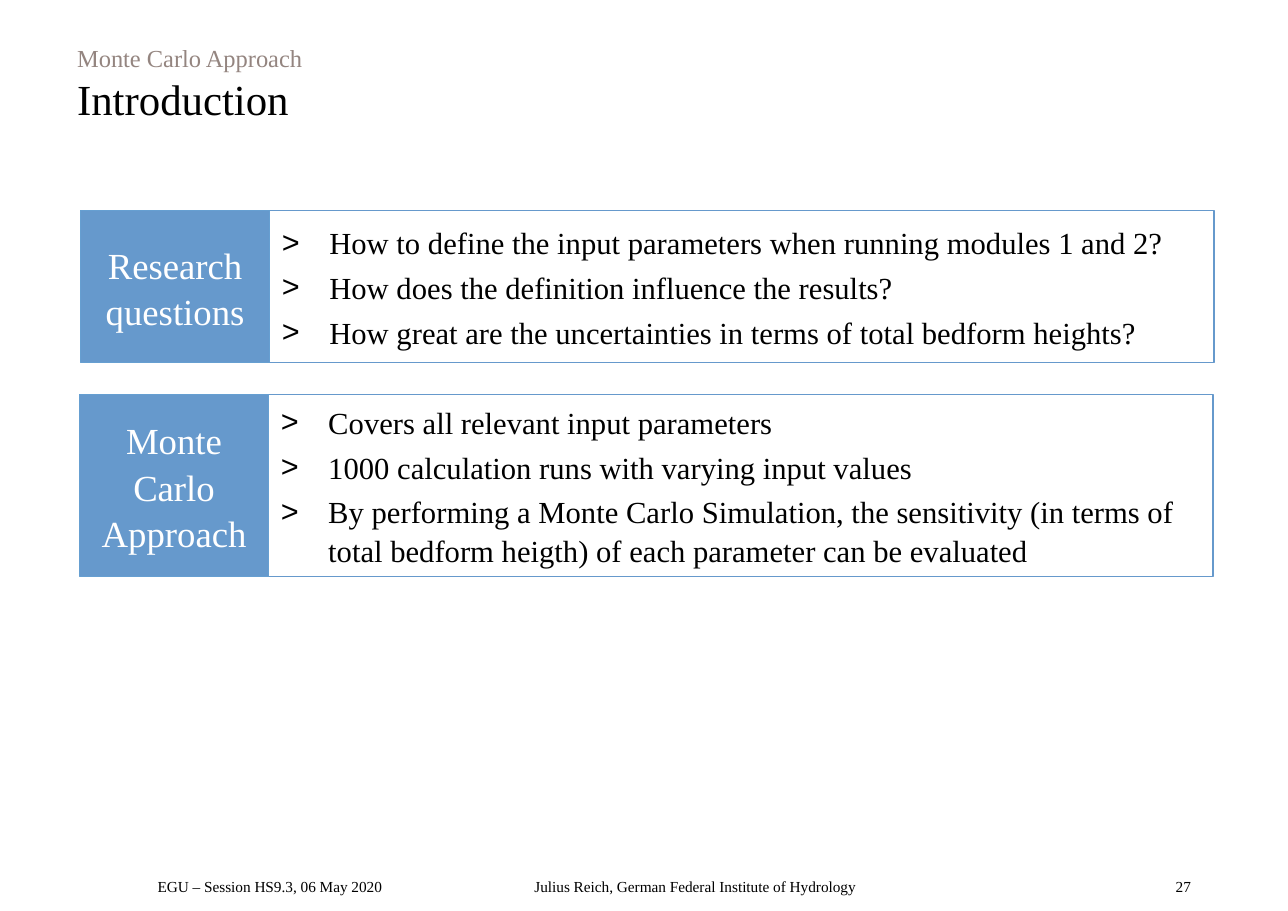
from lxml.etree import SubElement
from pptx import Presentation
from pptx.dml.color import RGBColor
from pptx.enum.shapes import MSO_SHAPE
from pptx.enum.text import MSO_ANCHOR, PP_ALIGN
from pptx.oxml.ns import qn
from pptx.util import Inches, Pt

BLUE, EDGE, GREY = "6699CC", "669FD1", "948580"
BLACK, WHITE = "000000", "FFFFFF"


def tint(code):
    return RGBColor.from_string(code)


class Deck:
    face = "Times New Roman"
    inset = Inches(0.11), Inches(0.06)
    indent = Inches(0.43)

    def __init__(self, width, height):
        self.file = Presentation()
        self.file.slide_width = Inches(width)
        self.file.slide_height = Inches(height)
        self.slide = self.file.slides.add_slide(self.file.slide_layouts[6])

    def area(self, left, top, width, height):
        across, down = self.file.slide_width / 100, self.file.slide_height / 100
        return [int(left * across), int(top * down),
                int(width * across), int(height * down)]

    def frame(self, shape, inset, anchor):
        frame = shape.text_frame
        frame.word_wrap = True
        frame.vertical_anchor = anchor
        frame.margin_left = frame.margin_right = inset[0]
        frame.margin_top = frame.margin_bottom = inset[1]
        return frame

    def line(self, frame, text, size, color, align=PP_ALIGN.LEFT, space=1.0):
        first = frame.paragraphs[0]
        para = frame.add_paragraph() if first.runs else first
        para.add_run().text = text
        para.alignment = align
        para.line_spacing = space
        font = para.font
        font.name, font.size = self.face, Pt(size)
        font.color.rgb = tint(color)
        return para

    def text(self, place):
        box = self.slide.shapes.add_textbox(*self.area(*place))
        return self.frame(box, self.inset, MSO_ANCHOR.TOP)

    def title(self, place, over, head):
        frame = self.text(place)
        self.line(frame, over, 16, GREY)
        self.line(frame, head, 28, BLACK)

    def footer(self, place, text, align=PP_ALIGN.LEFT, stop=None):
        para = self.line(self.text(place), text, 10, BLACK, align, 0.9)
        if stop:
            props = para._p.get_or_add_pPr()
            tabs = SubElement(props, qn("a:tabLst"))
            SubElement(tabs, qn("a:tab"), pos=str(self.area(stop, 0, 0, 0)[0]), algn="l")
            props.insert_element_before(tabs, "a:defRPr", "a:extLst")

    def rect(self, place, edge, fill=None):
        shape = self.slide.shapes.add_shape(MSO_SHAPE.RECTANGLE, *self.area(*place))
        shape.shadow.inherit = False
        if fill:
            shape.fill.solid()
            shape.fill.fore_color.rgb = tint(fill)
        else:
            shape.fill.background()
        shape.line.color.rgb = tint(edge)
        shape.line.width = Pt(0.75)
        return shape

    def label(self, place, text):
        shape = self.rect(place, EDGE, BLUE)
        frame = self.frame(shape, (Inches(0.1), Inches(0.05)), MSO_ANCHOR.MIDDLE)
        self.line(frame, text, 24, WHITE, PP_ALIGN.CENTER, 1.05)

    def points(self, place, items):
        frame = self.frame(self.rect(place, BLUE), self.inset, MSO_ANCHOR.MIDDLE)
        for index, item in enumerate(items):
            para = self.line(frame, item, 20, BLACK, space=1.05)
            para.space_before = Pt(4 if index else 0)
            self.bullet(para)

    def bullet(self, para):
        props = para._p.get_or_add_pPr()
        props.set("marL", str(self.indent))
        props.set("indent", str(-self.indent))
        for tag, name, value in (("a:buFont", "typeface", "Arial"),
                                 ("a:buChar", "char", ">")):
            mark = SubElement(props, qn(tag))
            mark.set(name, value)
            props.insert_element_before(mark, "a:defRPr", "a:extLst")

    def panel(self, left, top, height, name, items):
        side, main = 14.71, 73.31
        self.points((left + side, top, main, height), items)
        self.label((left, top, side, height), name)


def main():
    deck = Deck(11.69, 8.27)
    deck.footer((11.29, 95.77, 67.75, 4.96),
                "EGU – Session HS9.3, 06 May 2020\t"
                "Julius Reich, German Federal Institute of Hydrology", stop=29.26)
    deck.footer((86.83, 95.77, 10.09, 4.96), "27", PP_ALIGN.CENTER)
    deck.title((5.05, 3.99, 90, 16.69), "Monte Carlo Approach", "Introduction")
    deck.panel(6.24, 23.1, 16.69, "Research questions", [
        "How to define the input parameters when running modules 1 and 2?",
        "How does the definition influence the results?",
        "How great are the uncertainties in terms of total bedform heights?",
    ])
    deck.panel(6.16, 43.29, 19.95, "Monte Carlo Approach", [
        "Covers all relevant input parameters",
        "1000 calculation runs with varying input values",
        "By performing a Monte Carlo Simulation, the sensitivity (in terms of "
        "total bedform heigth) of each parameter can be evaluated",
    ])
    deck.file.save("out.pptx")


if __name__ == "__main__":
    main()
